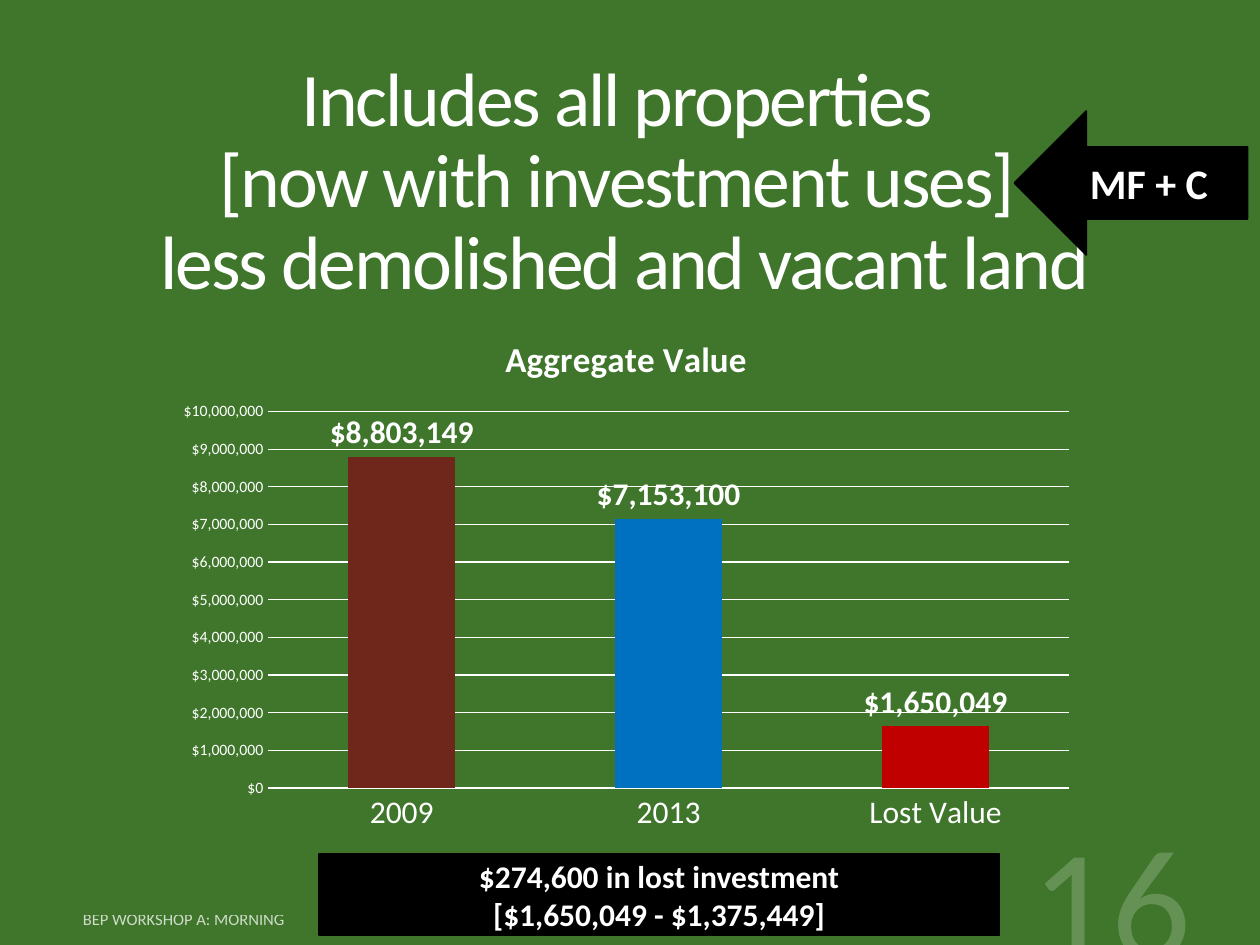
import pptx
import pptx.chart.data
import pptx.dml.color
import pptx.enum.chart
import pptx.enum.shapes
import pptx.enum.text
import pptx.oxml
import pptx.oxml.ns
import pptx.util
from pptx.util import Cm, Pt

COLORS = {"green": "3F762B", "white": "FFFFFF", "black": "000000",
          "2009": "6F271C", "2013": "0070C0", "lost": "C00000"}
FONT = "Calibri"
DOLLARS = '"$"#,##0'
ALIGN = pptx.enum.text.PP_ALIGN
ANCHOR = pptx.enum.text.MSO_ANCHOR


def rgb(name):
    return pptx.dml.color.RGBColor.from_string(COLORS[name])


def write(shape, text, size, align, anchor=ANCHOR.MIDDLE, bold=False, alpha=100):
    frame = shape.text_frame
    frame.word_wrap = True
    frame.vertical_anchor = anchor
    frame.text = text
    for paragraph in frame.paragraphs:
        paragraph.alignment = align
        font = paragraph.font
        font.name, font.size, font.bold = FONT, Pt(size), bold
        font.color.rgb = rgb("white")
        if alpha < 100:
            for color in paragraph._p.iter(pptx.oxml.ns.qn("a:srgbClr")):
                pptx.oxml.parse_xml(
                    f'<a:alpha {pptx.oxml.ns.nsdecls("a")} val="{alpha * 1000}"/>')
                color.append(pptx.oxml.parse_xml(
                    f'<a:alpha {pptx.oxml.ns.nsdecls("a")} val="{alpha * 1000}"/>'))


deck = pptx.Presentation()
deck.slide_width, deck.slide_height = Cm(25.4), Cm(19.05)
slide = deck.slides.add_slide(deck.slide_layouts[6])
slide.background.fill.solid()
slide.background.fill.fore_color.rgb = rgb("green")

# Heading: one paragraph with line breaks and tightened letters
heading = slide.shapes.add_textbox(Cm(1.37), Cm(1.4), Cm(22.45), Cm(4.6))
write(heading, "Includes all properties \v[now with investment uses] \v"
      "less demolished and vacant land", 43.2, ALIGN.CENTER)
heading_paragraph = heading.text_frame.paragraphs[0]
heading_paragraph.line_spacing = 0.9
for properties in heading_paragraph._p.iter(pptx.oxml.ns.qn("a:defRPr")):
    properties.set("spc", "-120")

# Footer and page number
footer = slide.shapes.add_textbox(Cm(1.42), Cm(18.21), Cm(10.46), Cm(0.64))
write(footer, "BEP WORKSHOP A: MORNING", 9.5, ALIGN.LEFT, alpha=75)
page_number = slide.shapes.add_textbox(Cm(18.16), Cm(16.21), Cm(6.1), Cm(3.89))
write(page_number, "16", 90, ALIGN.RIGHT, ANCHOR.BOTTOM, alpha=20)

# Aggregate value chart
values = pptx.chart.data.CategoryChartData(number_format=DOLLARS)
values.categories = ["2009", "2013", "Lost Value"]
values.add_series("Aggregate Value", [8803149, 7153100, 1650049])
chart = slide.shapes.add_chart(
    pptx.enum.chart.XL_CHART_TYPE.COLUMN_CLUSTERED,
    Cm(3.33), Cm(6.25), Cm(18.59), Cm(10.72), values).chart
chart.has_legend = False
chart.has_title = True
chart.chart_title.include_in_layout = False
chart.chart_title.text_frame.text = "Aggregate Value"

plot = chart.plots[0]
plot.gap_width = 150
plot.vary_by_categories = False
bars = plot.series[0]
bars.format.fill.solid()
bars.format.fill.fore_color.rgb = rgb("2009")
for index, color in enumerate(["2013", "lost"], start=1):
    bar_fill = bars.points[index].format.fill
    bar_fill.solid()
    bar_fill.fore_color.rgb = rgb(color)

labels = bars.data_labels
labels.show_value = True
labels.number_format, labels.number_format_is_linked = DOLLARS, False
labels.position = pptx.enum.chart.XL_LABEL_POSITION.OUTSIDE_END

years, dollars = chart.category_axis, chart.value_axis
for axis in (years, dollars):
    axis.major_tick_mark = pptx.enum.chart.XL_TICK_MARK.NONE
    axis.format.line.fill.background()
dollars.minimum_scale, dollars.maximum_scale = 0, 10_000_000
dollars.major_unit = 1_000_000
dollars.tick_labels.number_format = DOLLARS
dollars.tick_labels.number_format_is_linked = False
dollars.has_major_gridlines = True
dollars.major_gridlines.format.line.color.rgb = rgb("white")
dollars.major_gridlines.format.line.width = Pt(0.75)

for font, size, bold in [
    (chart.font, 10, False),
    (chart.chart_title.text_frame.paragraphs[0].font, 20, True),
    (labels.font, 18, True),
    (years.tick_labels.font, 18, False),
    (dollars.tick_labels.font, 9, False),
]:
    font.name, font.size, font.bold = FONT, Pt(size), bold
    font.color.rgb = rgb("white")

# Black callouts: lost investment and the arrow to the heading
PRESET = pptx.enum.shapes.MSO_SHAPE
for preset, left, top, width, height, text, size in [
    (PRESET.RECTANGLE, 6.43, 17.22, 13.72, 1.63,
     "$274,600 in lost investment\n[$1,650,049 - $1,375,449]", 18),
    (PRESET.LEFT_ARROW, 20.45, 2.24, 4.7, 2.9, "MF + C", 24),
]:
    callout = slide.shapes.add_shape(preset, Cm(left), Cm(top), Cm(width), Cm(height))
    callout.shadow.inherit = False
    callout.fill.solid()
    callout.fill.fore_color.rgb = rgb("black")
    callout.line.color.rgb = rgb("black")
    callout.line.width = Pt(1)
    write(callout, text, size, ALIGN.CENTER, bold=True)

deck.save("out.pptx")
